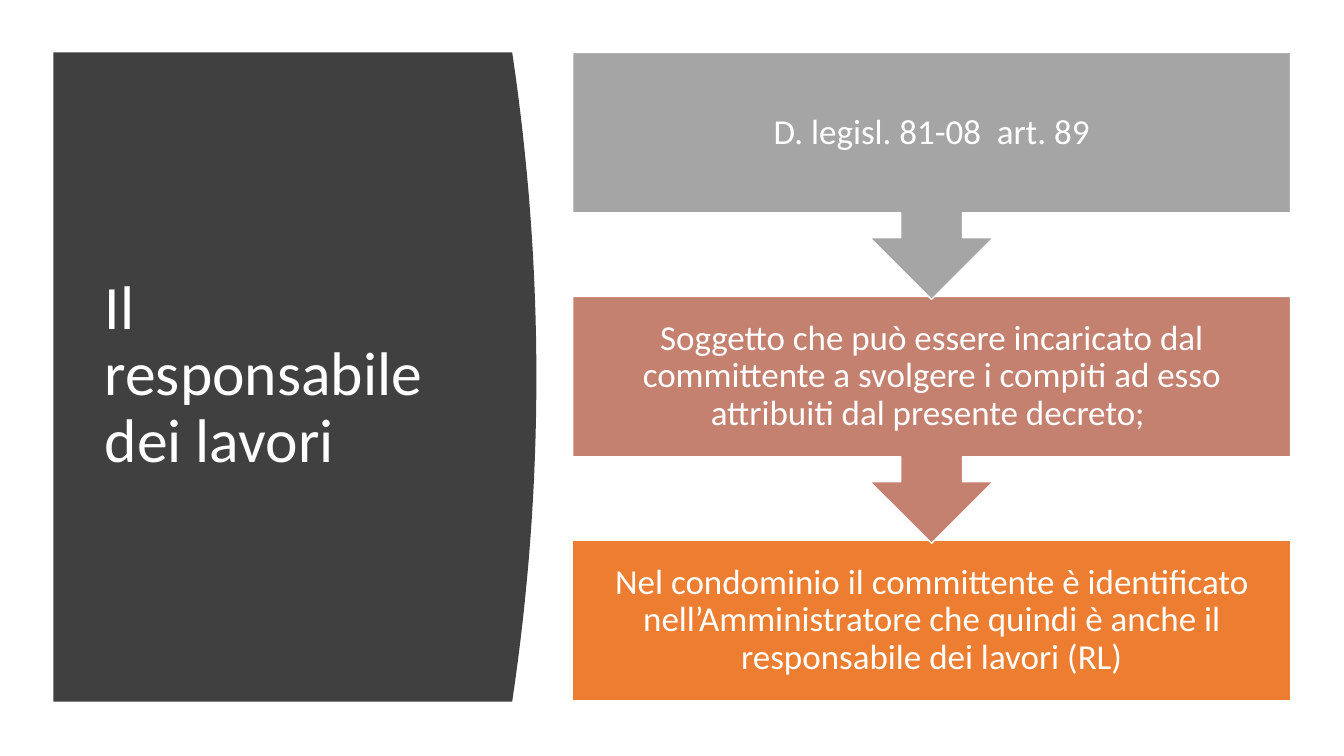
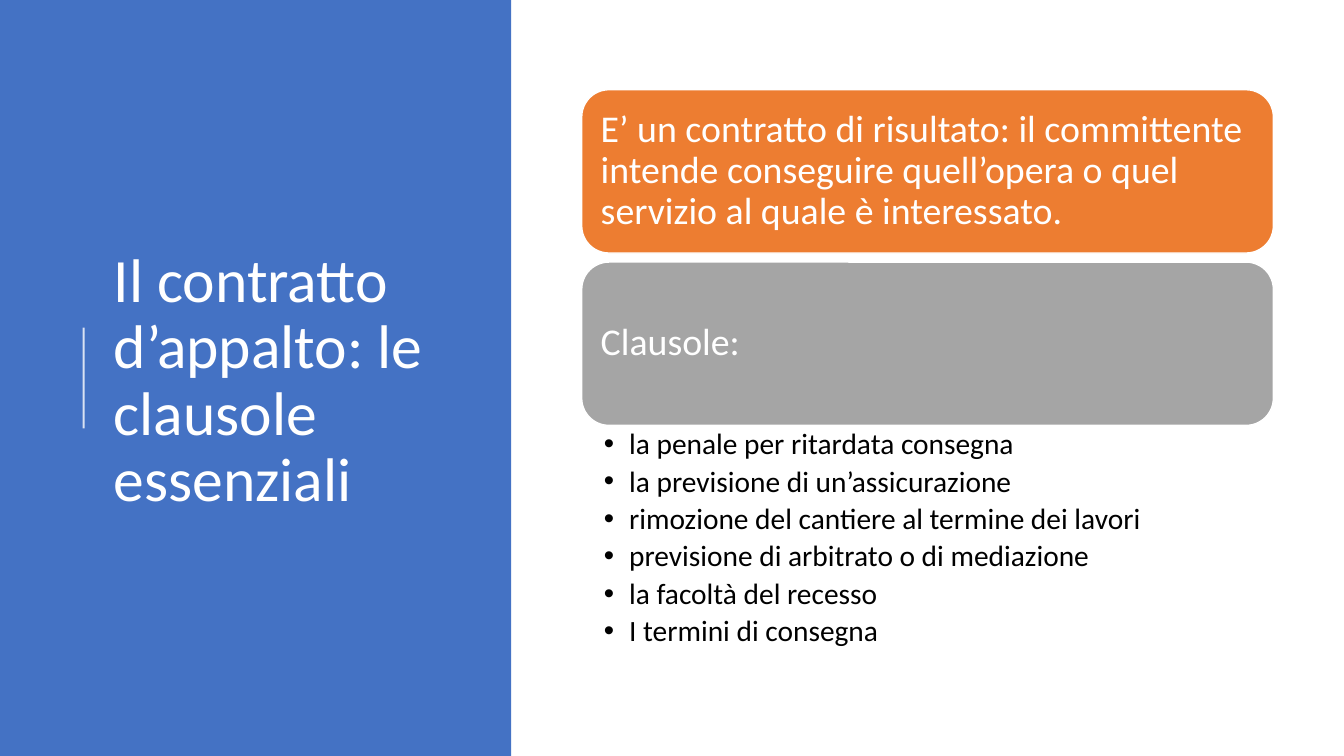
from lxml import etree
from pptx import Presentation
from pptx.dml.color import RGBColor
from pptx.enum.shapes import MSO_CONNECTOR, MSO_SHAPE
from pptx.enum.text import MSO_ANCHOR, PP_ALIGN
from pptx.oxml.ns import qn
from pptx.util import Pt

PX = 9144  # EMU in one px, at 100 px to the inch
WHITE = RGBColor(0xFF, 0xFF, 0xFF)
BLACK = RGBColor(0x00, 0x00, 0x00)
CHARCOAL = RGBColor(0x40, 0x40, 0x40)
GREY = RGBColor(0xA5, 0xA5, 0xA5)
ROSE = RGBColor(0xC4, 0x81, 0x70)
ORANGE = RGBColor(0xED, 0x7D, 0x31)
BLUE = RGBColor(0x44, 0x72, 0xC4)

RECTANGLE = MSO_SHAPE.RECTANGLE
ROUNDED = MSO_SHAPE.ROUNDED_RECTANGLE
CALLOUT = MSO_SHAPE.DOWN_ARROW_CALLOUT
STRAIGHT = MSO_CONNECTOR.STRAIGHT
TOP, MIDDLE = MSO_ANCHOR.TOP, MSO_ANCHOR.MIDDLE
LEFT, CENTER = PP_ALIGN.LEFT, PP_ALIGN.CENTER


def emu(*lengths):
    return [round(length * PX) for length in lengths]


def set_all(target, values):
    for name, value in values.items():
        setattr(target, name, value)


class Deck:
    font = "Calibri"
    line_spacing = 0.9
    title_size = 44
    outline = 1

    def __init__(self, width, height):
        self.presentation = Presentation()
        size = emu(width, height)
        set_all(self.presentation, dict(zip(("slide_width", "slide_height"), size)))
        self.slide = None

    def new_slide(self):
        layout = self.presentation.slide_layouts[6]
        self.slide = self.presentation.slides.add_slide(layout)

    def set_text(self, shape, lines, size, color=WHITE, align=LEFT, anchor=MIDDLE,
                 insets=(10, 5, 10, 5), gap=0):
        """Fill the shape with one paragraph per line; insets run left, top, right, bottom."""
        frame = shape.text_frame
        left, top, right, bottom = emu(*insets)
        set_all(frame, {"word_wrap": True, "vertical_anchor": anchor,
                        "margin_left": left, "margin_top": top,
                        "margin_right": right, "margin_bottom": bottom})
        frame.text = "\n".join(lines)
        for paragraph in frame.paragraphs:
            set_all(paragraph, {"alignment": align, "line_spacing": self.line_spacing,
                                "space_after": Pt(gap)})
            set_all(paragraph.runs[0].font, {"name": self.font, "size": Pt(size)})
            paragraph.runs[0].font.color.rgb = color

    def paint(self, shape, fill, outlined=False):
        shape.shadow.inherit = False
        shape.fill.solid()
        shape.fill.fore_color.rgb = fill
        if outlined:
            shape.line.color.rgb = WHITE
            shape.line.width = Pt(self.outline)
        else:
            shape.line.fill.background()

    def panel(self, box, fill):
        self.paint(self.slide.shapes.add_shape(RECTANGLE, *emu(*box)), fill)

    def curved_panel(self, box, bulge, fill, steps=32):
        """Draw a panel whose right side swells outwards along a parabola."""
        left, top, width, height = box
        side = [(left + width - bulge * (2 * step / steps - 1) ** 2,
                 top + height * step / steps) for step in range(steps + 1)]
        builder = self.slide.shapes.build_freeform(*emu(left, top))
        points = side + [(left, top + height)]
        builder.add_line_segments([emu(*point) for point in points], close=True)
        self.paint(builder.convert_to_shape(), fill)

    def text_box(self, box, lines, size, **style):
        shape = self.slide.shapes.add_textbox(*emu(*box))
        self.set_text(shape, lines, size, **style)
        return shape

    def title(self, box, text):
        self.text_box(box, [text], self.title_size)

    def block(self, kind, box, fill, text, size, **style):
        shape = self.slide.shapes.add_shape(kind, *emu(*box))
        self.paint(shape, fill, outlined=True)
        self.set_text(shape, [text], size, **style)

    def bullets(self, box, lines, size, indent, **style):
        shape = self.text_box(box, lines, size, color=BLACK, anchor=TOP, **style)
        hang = emu(indent)[0]
        for paragraph in shape.text_frame.paragraphs:
            properties = paragraph._p.get_or_add_pPr()
            properties.set("marL", str(hang))
            properties.set("indent", str(-hang))
            etree.SubElement(properties, qn("a:buFont"), typeface="Arial")
            etree.SubElement(properties, qn("a:buChar"), char="•")

    def rule(self, start, end, width, opacity):
        line = self.slide.shapes.add_connector(STRAIGHT, *emu(*start, *end))
        line.line.color.rgb = WHITE
        line.line.width = Pt(width)
        color = line._element.spPr.find(".//" + qn("a:srgbClr"))
        etree.SubElement(color, qn("a:alpha"), val=str(opacity * 1000))
        etree.SubElement(line._element.spPr, qn("a:effectLst"))


def responsible_slide(deck):
    deck.new_slide()
    deck.curved_panel((53, 52, 479, 644), 24, CHARCOAL)
    deck.title((94, 111, 374, 524), "Il responsabile dei lavori")
    steps = [
        (CALLOUT, 245, GREY, "D. legisl. 81-08  art. 89"),
        (CALLOUT, 245, ROSE, "Soggetto che può essere incaricato dal committente a svolgere "
                             "i compiti ad esso attribuiti dal presente decreto; "),
        (RECTANGLE, 159, ORANGE, "Nel condominio il committente è identificato "
                                 "nell’Amministratore che quindi è anche il "
                                 "responsabile dei lavori (RL)"),
    ]
    # Last step first, so that each arrow tip lies over the step below it
    for row, (kind, height, fill, text) in reversed(list(enumerate(steps))):
        deck.block(kind, (568, 52 + 242 * row, 712, height), fill, text, 25,
                   align=CENTER, insets=(19,) * 4)


def contract_slide(deck):
    deck.new_slide()
    deck.panel((0, 0, 507, 750), BLUE)
    deck.title((103, 78, 369, 602), "Il contratto d’appalto: le clausole essenziali")
    deck.rule((83, 425), (83, 325), 1.5, 80)
    cards = [
        (ORANGE, "E’ un contratto di risultato: il committente intende conseguire "
                 "quell’opera o quel servizio al quale è interessato."),
        (GREY, "Clausole:"),
    ]
    for row, (fill, text) in enumerate(cards):
        deck.block(ROUNDED, (577, 89 + 171 * row, 686, 162), fill, text, 27,
                   insets=(11,) * 4)
    clauses = [
        "la penale per ritardata consegna",
        "la previsione di un’assicurazione",
        "rimozione del cantiere al termine dei lavori",
        "previsione di arbitrato o di mediazione",
        "la facoltà del recesso",
        "I termini di consegna",
    ]
    deck.bullets((577, 422, 686, 238), clauses, 21, 25, insets=(22, 4, 21, 4), gap=4)


def main():
    deck = Deck(1333, 750)
    responsible_slide(deck)
    contract_slide(deck)
    deck.presentation.save("out.pptx")


if __name__ == "__main__":
    main()
